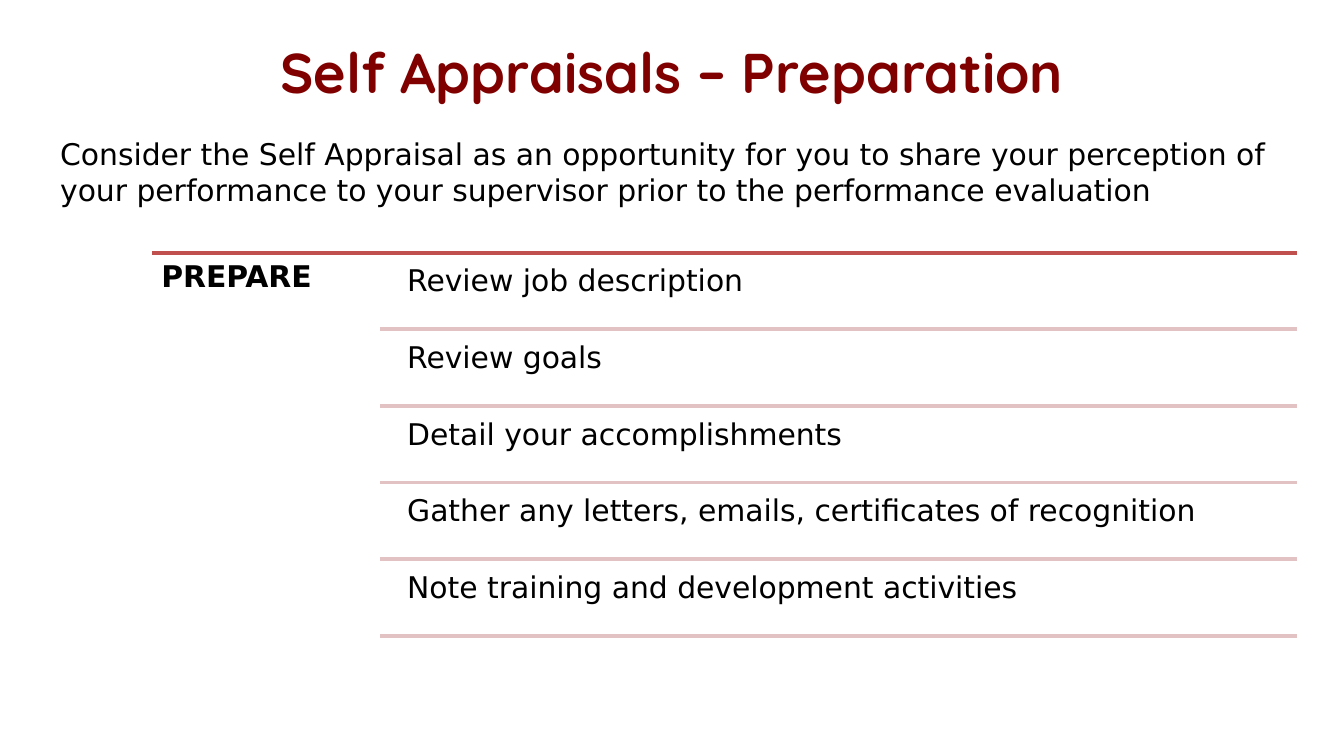
from lxml import etree
from pptx import Presentation
from pptx.dml.color import RGBColor
from pptx.enum.shapes import MSO_CONNECTOR
from pptx.enum.text import MSO_ANCHOR, PP_ALIGN
from pptx.oxml.ns import qn
from pptx.util import Inches, Pt

STRAIGHT = MSO_CONNECTOR.STRAIGHT
TOP = MSO_ANCHOR.TOP
CENTER = PP_ALIGN.CENTER

TITLE = "Self Appraisals – Preparation"
INTRO = ("Consider the Self Appraisal as an opportunity for you to share your "
         "perception of your performance to your supervisor prior to the "
         "performance evaluation")
HEADING = "PREPARE"
STEPS = [
    "Review job description",
    "Review goals",
    "Detail your accomplishments",
    "Gather any letters, emails, certificates of recognition",
    "Note training and development activities",
]

COLORS = {"title": "800000", "text": "000000", "rule": "C0504D", "divider": "E2C2C2"}
TITLE_FONT, BODY_FONT = "Quicksand", "DejaVu Sans"

SLIDE_WIDTH = 10
SLIDE_HEIGHT = SLIDE_WIDTH * 9 / 16
LIST_LEFT, LIST_RIGHT, LIST_TOP = 1.13, 9.65, 1.88
DIVIDER_LEFT, STEP_LEFT = 2.83, 2.96
ROW_PITCH, ROW_GAP, ROW_HEIGHT = 0.57, 0.03, 0.54
LIST_INSET = 0.07


def style(para, font, size, color, bold=False):
    for span in para.runs:
        span.font.name = font
        span.font.size = Pt(size)
        span.font.bold = bold
        span.font.color.rgb = RGBColor.from_string(COLORS[color])


def add_text(page, text, left, top, width, height, bold=False):
    box = page.shapes.add_textbox(Inches(left), Inches(top), Inches(width), Inches(height))
    frame = box.text_frame
    frame.word_wrap = True
    frame.text = text
    style(frame.paragraphs[0], BODY_FONT, 16, "text", bold)
    return frame


def add_list_text(page, text, left, top, width, height, bold=False):
    frame = add_text(page, text, left, top, width, height, bold)
    frame.margin_left = frame.margin_right = Inches(LIST_INSET)
    frame.margin_top = frame.margin_bottom = Inches(LIST_INSET)
    frame.paragraphs[0].line_spacing = 0.9


def add_rule(page, left, y, color):
    rule = page.shapes.add_connector(
        STRAIGHT, Inches(left), Inches(y), Inches(LIST_RIGHT), Inches(y))
    rule.line.color.rgb = RGBColor.from_string(COLORS[color])
    rule.line.width = Pt(2)
    etree.SubElement(rule._element.spPr, qn("a:effectLst"))


def add_title(page):
    title = page.shapes.title
    title.left, title.top = Inches(0.5), Inches(0.23)
    title.width, title.height = Inches(9), Inches(0.94)
    frame = title.text_frame
    frame.text = TITLE
    frame.vertical_anchor = TOP
    frame.paragraphs[0].alignment = CENTER
    style(frame.paragraphs[0], TITLE_FONT, 30, "title", bold=True)


def main():
    deck = Presentation()
    deck.slide_width, deck.slide_height = Inches(SLIDE_WIDTH), Inches(SLIDE_HEIGHT)
    page = deck.slides.add_slide(deck.slide_layouts.get_by_name("Title Only"))

    add_title(page)
    add_rule(page, LIST_LEFT, LIST_TOP, "rule")
    add_list_text(page, HEADING, LIST_LEFT, LIST_TOP, 1.71, 2.88, bold=True)
    for row, step in enumerate(STEPS):
        top = LIST_TOP + row * ROW_PITCH
        add_list_text(page, step, STEP_LEFT, top + ROW_GAP,
                      LIST_RIGHT - STEP_LEFT, ROW_HEIGHT)
        add_rule(page, DIVIDER_LEFT, top + ROW_PITCH, "divider")
    add_text(page, INTRO, 0.35, 0.96, 9.3, 0.64)

    deck.save("out.pptx")


if __name__ == "__main__":
    main()
